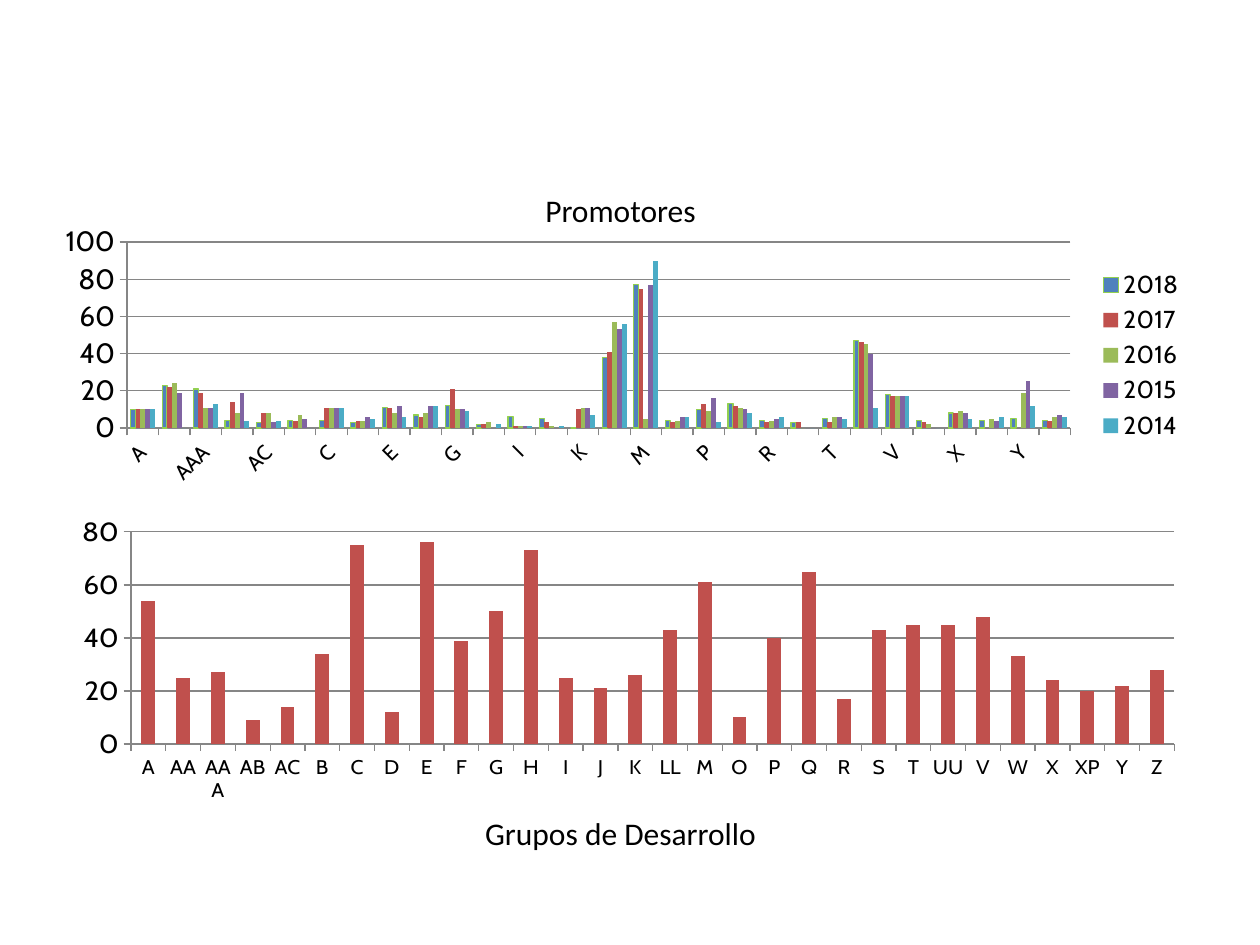
import pptx
import pptx.chart.data
import pptx.dml.color
import pptx.enum.chart
import pptx.enum.text
import pptx.util
from lxml import etree
from pptx.util import Inches, Pt

GROUPS = ("A AA AAA AB AC B C D E F G H I J K LL M O P Q R S T UU V W X XP Y Z").split()
YEARS = [
    ("2018", "4F81BD", [10, 23, 21, 4, 3, 4, 4, 3, 11, 7, 12, 2, 6, 5, 0, 38, 77, 4,
                        10, 13, 4, 3, 5, 47, 18, 4, 8, 4, 5, 4]),
    ("2017", "C0504D", [10, 22, 19, 14, 8, 4, 11, 4, 11, 6, 21, 2, 1, 3, 10, 41, 75, 3,
                        13, 12, 3, 3, 3, 46, 17, 3, 8, 0, 0, 4]),
    ("2016", "9BBB59", [10, 24, 11, 8, 8, 7, 11, 4, 8, 8, 10, 3, 1, 1, 11, 57, 5, 4,
                        9, 11, 4, 0, 6, 45, 17, 2, 9, 5, 19, 6]),
    ("2015", "8064A2", [10, 19, 11, 19, 3, 5, 11, 6, 12, 12, 10, 0, 1, 0, 11, 53, 77, 6,
                        16, 10, 5, 0, 6, 40, 17, 0, 8, 4, 25, 7]),
    ("2014", "4BACC6", [10, 0, 13, 4, 4, 0, 11, 5, 6, 12, 9, 2, 1, 1, 7, 56, 90, 6,
                        3, 8, 6, 0, 5, 11, 17, 0, 5, 6, 12, 6]),
]
TOTALS = [
    ("Series 1", "C0504D", [54, 25, 27, 9, 14, 34, 75, 12, 76, 39, 50, 73, 25, 21, 26, 43,
                            61, 10, 40, 65, 17, 43, 45, 45, 48, 33, 24, 20, 22, 28]),
]
CHARTS = [
    dict(rows=YEARS, box=(0.37, 1.75, 9.13, 2.14), plot=(0.07, 0.08, 0.82, 0.69),
         top=100, turn=-45, key=True),
    dict(rows=TOTALS, box=(0.5, 4.07, 9, 2.3), plot=(0.06, 0.07, 0.92, 0.78),
         top=80, turn=0, key=False),
]
LABELS = [("Promotores", 1.47), ("Grupos de Desarrollo", 6.41)]
NS = "http://schemas.openxmlformats.org/drawingml/2006/chart"


def color(text):
    return pptx.dml.color.RGBColor.from_string(text)


def style(font, size, face="Cabin"):
    font.size = Pt(size)
    font.name = face
    font.color.rgb = color("000000")


def rule(line, tone="868686"):
    line.color.rgb = color(tone)
    line.width = Pt(0.75)


def place(chart, plot):
    area = chart._chartSpace.find(f".//{{{NS}}}plotArea")
    for old in area.findall(f"{{{NS}}}layout"):
        area.remove(old)
    layout = etree.Element(f"{{{NS}}}layout")
    manual = etree.SubElement(layout, f"{{{NS}}}manualLayout")
    parts = [("layoutTarget", "inner"), ("xMode", "edge"), ("yMode", "edge")]
    for tag, val in parts + list(zip("xywh", plot)):
        etree.SubElement(manual, f"{{{NS}}}{tag}").set("val", str(val))
    area.insert(0, layout)


def draw(slide, rows, box, plot, top, turn, key):
    data = pptx.chart.data.CategoryChartData()
    data.categories = GROUPS
    for name, tone, vals in rows:
        data.add_series(name, vals)
    kind = pptx.enum.chart.XL_CHART_TYPE.COLUMN_CLUSTERED
    chart = slide.shapes.add_chart(kind, *map(Inches, box), data).chart
    style(chart.font, 10, "Calibri")
    chart.has_title = False
    chart.has_legend = key
    if key:
        chart.legend.position = pptx.enum.chart.XL_LEGEND_POSITION.RIGHT
        chart.legend.include_in_layout = False
        style(chart.legend.font, 14)
    bars = chart.plots[0]
    bars.gap_width = 150
    bars.overlap = 0
    bars.vary_by_categories = False
    for series, (name, tone, vals) in zip(bars.series, rows):
        series.format.fill.solid()
        series.format.fill.fore_color.rgb = color(tone)
        series.invert_if_negative = False
        if name == "2018":
            rule(series.format.line, "92D050")
    for axis, size in ((chart.category_axis, 12), (chart.value_axis, 16)):
        axis.major_tick_mark = pptx.enum.chart.XL_TICK_MARK.OUTSIDE
        style(axis.tick_labels.font, size)
        rule(axis.format.line)
    body = chart.category_axis._element.txPr.bodyPr
    body.set("rot", str(turn * 60000))
    body.set("vert", "horz")
    axis = chart.value_axis
    axis.minimum_scale, axis.maximum_scale, axis.major_unit = 0, top, 20
    axis.has_major_gridlines = True
    rule(axis.major_gridlines.format.line)
    place(chart, plot)


def label(slide, text, y):
    frame = slide.shapes.add_textbox(*map(Inches, (3.13, y, 3.59, 0.4))).text_frame
    frame.word_wrap = True
    frame.auto_size = pptx.enum.text.MSO_AUTO_SIZE.SHAPE_TO_FIT_TEXT
    para = frame.paragraphs[0]
    para.alignment = pptx.enum.text.PP_ALIGN.CENTER
    run = para.add_run()
    run.text = text
    style(run.font, 18, "Calibri")


deck = pptx.Presentation()
deck.slide_width, deck.slide_height = Inches(10), Inches(7.5)
slide = deck.slides.add_slide(deck.slide_layouts[6])
for item in CHARTS:
    draw(slide, **item)
for text, y in LABELS:
    label(slide, text, y)
deck.save("out.pptx")
